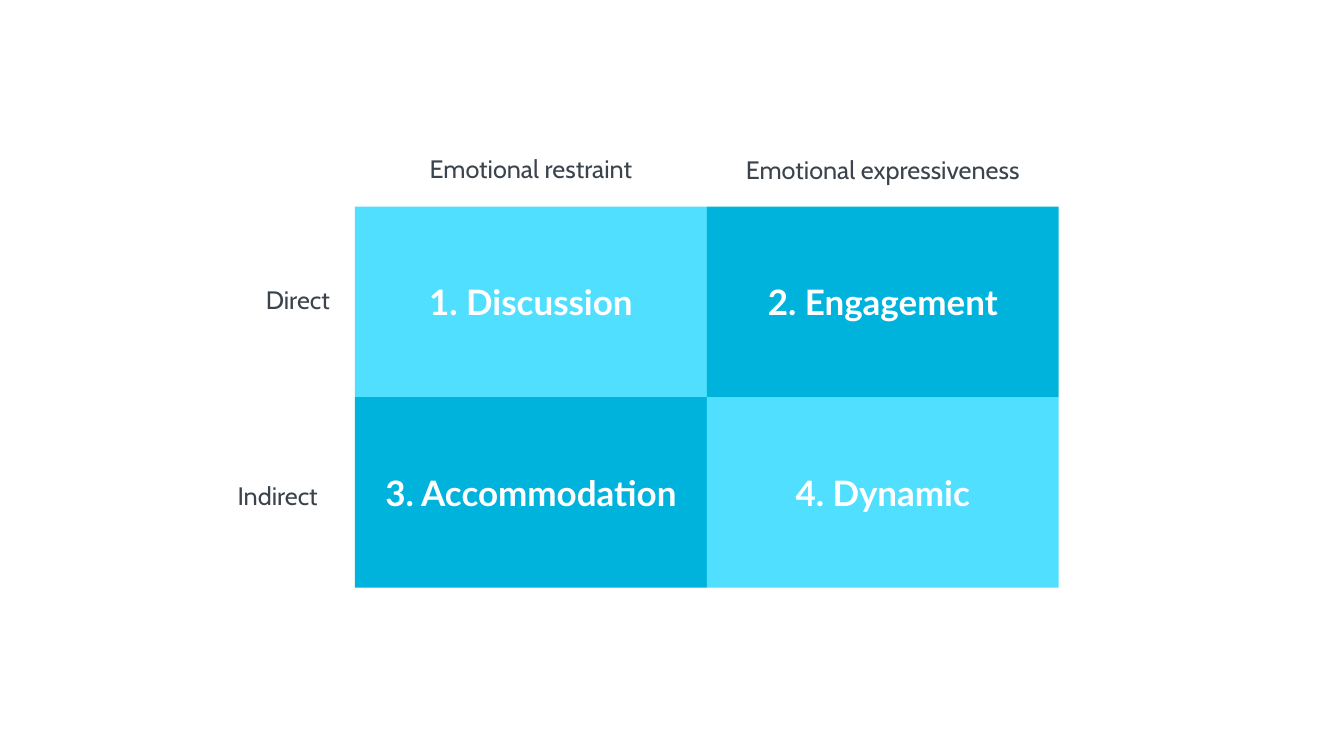
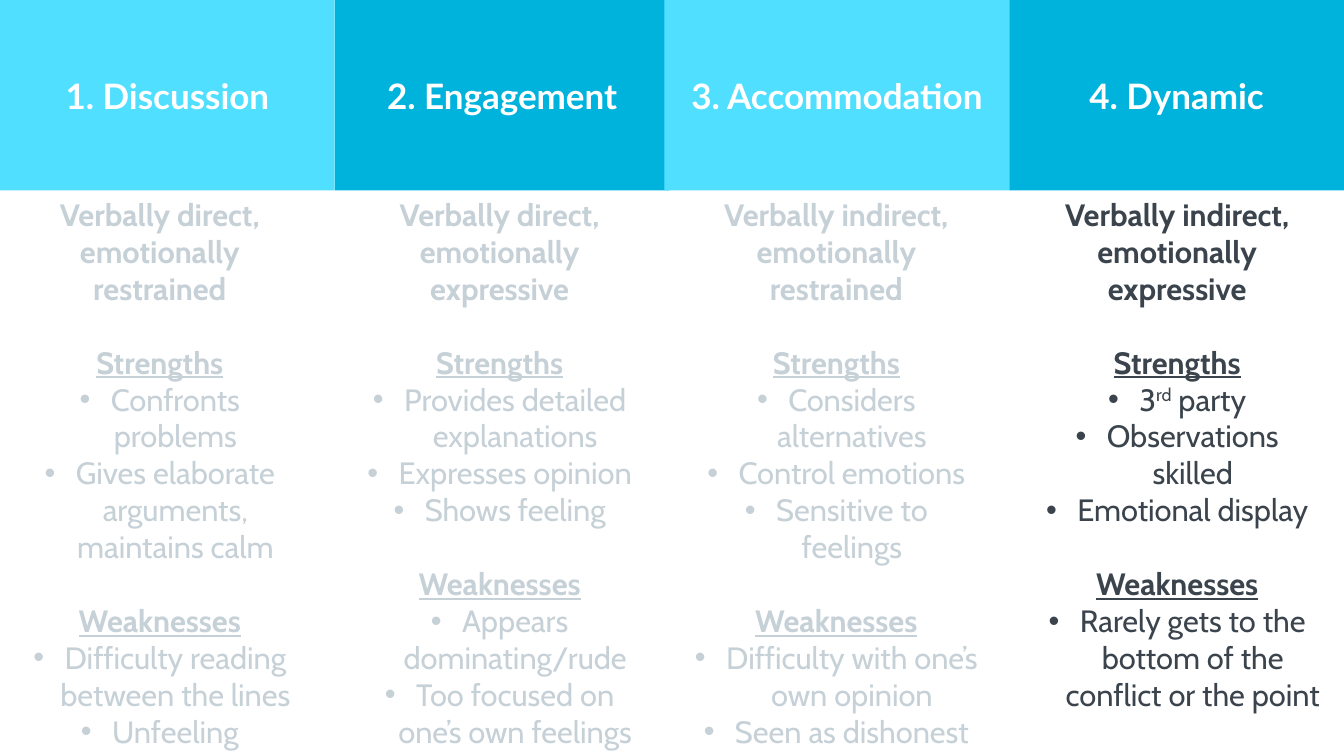
import lxml.etree
import pptx
import pptx.dml.color
import pptx.enum.shapes
import pptx.enum.text
import pptx.oxml.ns
import pptx.util

PX = 9144
LIGHT_BLUE = pptx.dml.color.RGBColor(0x51, 0xDF, 0xFF)
DEEP_BLUE = pptx.dml.color.RGBColor(0x00, 0xB3, 0xDC)
WHITE = pptx.dml.color.RGBColor(0xFF, 0xFF, 0xFF)
INK = pptx.dml.color.RGBColor(0x3B, 0x44, 0x4D)
FADED = pptx.dml.color.RGBColor(0xC6, 0xD0, 0xD7)
BLUES = [LIGHT_BLUE, DEEP_BLUE]
ALIGN = pptx.enum.text.PP_ALIGN
BAND_HEIGHT = 189
BULLET_INDENT = 31
BLANK_LINE = pptx.util.Pt(26.4)
STYLES = ["1. Discussion", "2. Engagement", "3. Accommodation", "4. Dynamic"]


def style_paragraph(paragraph, font, size, color, bold=False, align=ALIGN.CENTER):
    paragraph.alignment = align
    paragraph.font.name = font
    paragraph.font.size = pptx.util.Pt(size)
    paragraph.font.color.rgb = color
    paragraph.font.bold = bold


def add_style_block(slide, name, left, top, width, color):
    block = slide.shapes.add_shape(
        pptx.enum.shapes.MSO_SHAPE.RECTANGLE,
        left * PX, top * PX, width * PX, BAND_HEIGHT * PX)
    block.shadow.inherit = False
    block.fill.solid()
    block.fill.fore_color.rgb = color
    block.line.fill.background()
    block.text_frame.word_wrap = True
    block.text_frame.vertical_anchor = pptx.enum.text.MSO_ANCHOR.MIDDLE
    paragraph = block.text_frame.paragraphs[0]
    paragraph.text = name
    style_paragraph(paragraph, "Lato", 25, WHITE, bold=True)


deck = pptx.Presentation()
deck.slide_width = 1333 * PX
deck.slide_height = 750 * PX
blank = deck.slide_layouts[6]

matrix = deck.slides.add_slide(blank)
MATRIX_LEFT, MATRIX_TOP, CELL_WIDTH = 352, 205, 349
for index, name in enumerate(STYLES):
    row, column = divmod(index, 2)
    add_style_block(matrix, name, MATRIX_LEFT + column * CELL_WIDTH,
                    MATRIX_TOP + row * BAND_HEIGHT, CELL_WIDTH,
                    BLUES[(row + column) % 2])

axis_labels = [
    ("Emotional restraint", MATRIX_LEFT, 147, CELL_WIDTH, ALIGN.CENTER),
    ("Emotional expressiveness", MATRIX_LEFT + CELL_WIDTH, 148, CELL_WIDTH, ALIGN.CENTER),
    ("Direct", 123, 277, 214, ALIGN.RIGHT),
    ("Indirect", 111, 472, 214, ALIGN.RIGHT),
]
for text, left, top, width, align in axis_labels:
    label = matrix.shapes.add_textbox(left * PX, top * PX, width * PX, 40 * PX)
    label.text_frame.word_wrap = True
    label.text_frame.auto_size = pptx.enum.text.MSO_AUTO_SIZE.SHAPE_TO_FIT_TEXT
    paragraph = label.text_frame.paragraphs[0]
    paragraph.text = text
    style_paragraph(paragraph, "Cabin", 18, INK, align=align)

comparison = deck.slides.add_slide(blank)
bands = [(0, 332), (332, 332), (659, 342), (1001, 332)]
for index, (name, (left, width)) in enumerate(zip(STYLES, bands)):
    add_style_block(comparison, name, left, 0, width, BLUES[index % 2])

profiles = [
    (5, 528, FADED, "Verbally direct, emotionally restrained",
     ["Confronts problems", "Gives elaborate arguments, maintains calm"],
     ["Difficulty reading between the lines", "Unfeeling"]),
    (342, 565, FADED, "Verbally direct, emotionally expressive",
     ["Provides detailed explanations", "Expresses opinion", "Shows feeling"],
     ["Appears dominating/rude", "Too focused on one’s own feelings"]),
    (676, 528, FADED, "Verbally indirect, emotionally restrained",
     ["Considers alternatives", "Control emotions", "Sensitive to feelings"],
     ["Difficulty with one’s own opinion", "Seen as dishonest"]),
    (1014, 528, INK, "Verbally indirect, emotionally expressive",
     ["3^rd^ party", "Observations skilled", "Emotional display"],
     ["Rarely gets to the bottom of the conflict or the point"]),
]
for left, height, color, summary, strengths, weaknesses in profiles:
    profile = comparison.shapes.add_textbox(
        left * PX, BAND_HEIGHT * PX, 307 * PX, height * PX)
    frame = profile.text_frame
    frame.word_wrap = True
    frame.auto_size = pptx.enum.text.MSO_AUTO_SIZE.SHAPE_TO_FIT_TEXT
    frame.paragraphs[0].text = summary
    style_paragraph(frame.paragraphs[0], "Cabin", 22, color, bold=True)
    for title, points in [("Strengths", strengths), ("Weaknesses", weaknesses)]:
        heading = frame.add_paragraph()
        heading.text = title
        style_paragraph(heading, "Cabin", 22, color, bold=True)
        heading.font.underline = True
        heading.space_before = BLANK_LINE
        for point in points:
            item = frame.add_paragraph()
            properties = item._p.get_or_add_pPr()
            properties.set("marL", str(BULLET_INDENT * PX))
            properties.set("indent", str(-BULLET_INDENT * PX))
            bullet_font = lxml.etree.SubElement(properties, pptx.oxml.ns.qn("a:buFont"))
            bullet_font.set("typeface", "Arial")
            bullet = lxml.etree.SubElement(properties, pptx.oxml.ns.qn("a:buChar"))
            bullet.set("char", "•")
            for position, part in enumerate(point.split("^")):
                run = item.add_run()
                run.text = part
                if position % 2:
                    run._r.get_or_add_rPr().set("baseline", "30000")
            style_paragraph(item, "Cabin", 22, color)

deck.save("out.pptx")
